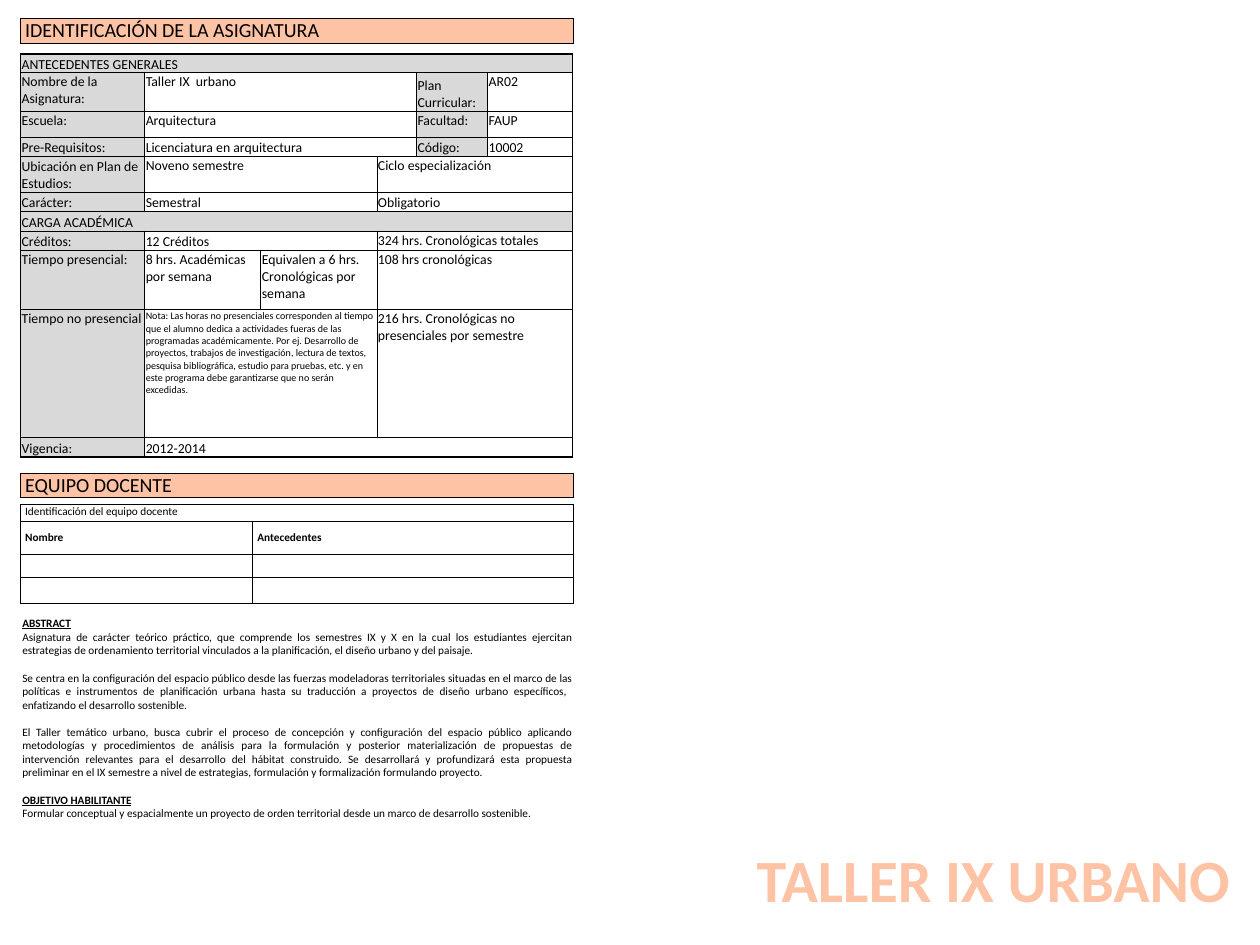
from dataclasses import dataclass

from lxml import etree
from pptx import Presentation
from pptx.dml.color import RGBColor
from pptx.enum.text import MSO_ANCHOR, PP_ALIGN
from pptx.oxml.ns import qn
from pptx.util import Inches, Pt

TOP, MIDDLE, BOTTOM = MSO_ANCHOR.TOP, MSO_ANCHOR.MIDDLE, MSO_ANCHOR.BOTTOM
LEFT, RIGHT, JUSTIFY = PP_ALIGN.LEFT, PP_ALIGN.RIGHT, PP_ALIGN.JUSTIFY

BLACK = RGBColor(0x00, 0x00, 0x00)
GRAY = RGBColor(0xD9, 0xD9, 0xD9)
PEACH = RGBColor(0xFD, 0xC3, 0xA4)
FONT = "Calibri"

TABLE_LEFT = 0.23
TABLE_WIDTH = 6.14
WIDE_INSETS = (0.05, 0)
TIGHT_INSETS = (0.01, 0.01)


@dataclass
class Cell:
    text: str = ""
    span: int = 1
    anchor: MSO_ANCHOR = TOP
    fill: RGBColor = None
    size: float = 11
    bold: bool = False


def label(text, anchor=TOP, span=1):
    return Cell(text, span, anchor, GRAY)


def subject_rows():
    return [
        [label("ANTECEDENTES GENERALES", BOTTOM, span=6)],
        [label("Nombre de la Asignatura:"), Cell("Taller IX  urbano", 3),
         label("Plan Curricular:", BOTTOM), Cell("AR02")],
        [label("Escuela:"), Cell("Arquitectura", 3), label("Facultad:"), Cell("FAUP")],
        [label("Pre-Requisitos:", BOTTOM), Cell("Licenciatura en arquitectura", 3, BOTTOM),
         label("Código:", BOTTOM), Cell("10002", anchor=BOTTOM)],
        [label("Ubicación en Plan de Estudios:", BOTTOM), Cell("Noveno semestre", 2),
         Cell("Ciclo especialización", 3)],
        [label("Carácter:", BOTTOM), Cell("Semestral", 2, BOTTOM), Cell("Obligatorio", 3, BOTTOM)],
        [label("CARGA ACADÉMICA", BOTTOM, span=6)],
        [label("Créditos:", BOTTOM), Cell("12 Créditos", 2, BOTTOM),
         Cell("324 hrs. Cronológicas totales", 3)],
        [label("Tiempo presencial:"), Cell("8 hrs. Académicas por semana"),
         Cell("Equivalen a 6 hrs. Cronológicas por semana"), Cell("108 hrs cronológicas", 3)],
        [label("Tiempo no presencial"),
         Cell("Nota: Las horas no presenciales corresponden al tiempo que el alumno dedica a "
              "actividades fueras de las programadas académicamente. Por ej. Desarrollo de "
              "proyectos, trabajos de investigación, lectura de textos, pesquisa bibliográfica, "
              "estudio para pruebas, etc. y en este programa debe garantizarse que no serán "
              "excedidas.", 2, size=8),
         Cell("216 hrs. Cronológicas no presenciales por semestre", 3)],
        [label("Vigencia:", BOTTOM), Cell("2012-2014", 5, BOTTOM)],
    ]


def team_rows():
    return [
        [Cell("Identificación del equipo docente", 2, size=9)],
        [Cell(text, anchor=MIDDLE, size=9, bold=True) for text in ("Nombre", "Antecedentes")],
        [Cell(size=9), Cell(size=9)],
        [Cell(size=9), Cell(size=9)],
    ]


# Each section: heading (or None) and body text
DESCRIPTION = [
    ("ABSTRACT",
     "Asignatura de carácter teórico práctico, que comprende los semestres IX y X en la cual los "
     "estudiantes ejercitan estrategias de ordenamiento territorial vinculados a la "
     "planificación, el diseño urbano y del paisaje."),
    (None,
     "Se centra en la configuración del espacio público desde las fuerzas modeladoras "
     "territoriales situadas en el marco de las políticas e instrumentos de planificación urbana "
     "hasta su traducción a proyectos de diseño urbano específicos,  enfatizando el desarrollo "
     "sostenible."),
    (None,
     "El Taller temático urbano, busca cubrir el proceso de concepción y configuración del "
     "espacio público aplicando metodologías y procedimientos de análisis para la formulación y "
     "posterior materialización de propuestas de intervención relevantes para el desarrollo del "
     "hábitat construido. Se desarrollará y profundizará esta propuesta preliminar en el IX "
     "semestre a nivel de estrategias, formulación y formalización formulando proyecto."),
    ("OBJETIVO HABILITANTE",
     "Formular conceptual y espacialmente un proyecto de orden territorial desde un marco de "
     "desarrollo sostenible."),
]


def write_text(paragraph, text, size=11, color=BLACK, bold=False, underline=False,
               align=LEFT, space_before=0):
    paragraph.alignment = align
    paragraph.space_before = Pt(space_before)
    if not text:
        # An empty paragraph takes its line height from its end mark.
        paragraph._p.get_or_add_endParaRPr().set("sz", str(int(size * 100)))
        return
    run = paragraph.add_run()
    run.text = text
    run.font.name = FONT
    run.font.size = Pt(size)
    run.font.color.rgb = color
    run.font.bold = bold
    run.font.underline = underline


def add_borders(cell):
    properties = cell._tc.get_or_add_tcPr()
    for side in ("a:lnL", "a:lnR", "a:lnT", "a:lnB"):
        line = etree.SubElement(properties, qn(side), w=str(Pt(1)))
        fill = etree.SubElement(line, qn("a:solidFill"))
        etree.SubElement(fill, qn("a:srgbClr"), val=str(BLACK))


def format_cell(cell, content, insets):
    side, top = insets
    cell.margin_left = cell.margin_right = Inches(side)
    cell.margin_top, cell.margin_bottom = Inches(top), 0
    cell.vertical_anchor = content.anchor
    add_borders(cell)
    if content.fill is None:
        cell.fill.background()
    else:
        cell.fill.solid()
        cell.fill.fore_color.rgb = content.fill
    write_text(cell.text_frame.paragraphs[0], content.text, size=content.size, bold=content.bold)


def add_table(slide, top, widths, heights, rows, insets):
    table = slide.shapes.add_table(
        len(heights), len(widths), Inches(TABLE_LEFT), Inches(top),
        Inches(sum(widths)), Inches(sum(heights))).table
    table.first_row = table.horz_banding = False
    for column, width in zip(table.columns, widths):
        column.width = Inches(width)
    for row, height in zip(table.rows, heights):
        row.height = Inches(height)
    for row_index, contents in enumerate(rows):
        column_index = 0
        for content in contents:
            last = column_index + content.span - 1
            format_cell(table.cell(row_index, column_index), content, insets)
            for covered in range(column_index + 1, last + 1):
                format_cell(table.cell(row_index, covered),
                            Cell(fill=content.fill, size=content.size), insets)
            if content.span > 1:
                table.cell(row_index, column_index).merge(table.cell(row_index, last))
            column_index = last + 1


def add_heading_bar(slide, top, text):
    add_table(slide, top, [TABLE_WIDTH], [0.27], [[Cell(text, fill=PEACH, size=16)]], WIDE_INSETS)


def add_text_box(slide, left, top, width, height, lines):
    """Add a wrapped box; lines are pairs of text and format arguments."""
    frame = slide.shapes.add_textbox(
        Inches(left), Inches(top), Inches(width), Inches(height)).text_frame
    frame.word_wrap = True
    for index, (text, text_format) in enumerate(lines):
        paragraph = frame.add_paragraph() if index else frame.paragraphs[0]
        write_text(paragraph, text, **text_format)


def description_lines():
    lines = []
    for heading, body in DESCRIPTION:
        gap = 11 if lines else 0
        if heading:
            lines.append((heading, dict(size=9, bold=True, underline=True, align=JUSTIFY,
                                        space_before=gap)))
            gap = 0
        lines.append((body, dict(size=9, align=JUSTIFY, space_before=gap)))
    return lines


def main():
    presentation = Presentation()
    presentation.slide_width, presentation.slide_height = Inches(14), Inches(10.5)
    slide = presentation.slides.add_slide(presentation.slide_layouts[6])

    add_heading_bar(slide, 0.21, "IDENTIFICACIÓN DE LA ASIGNATURA")
    add_table(slide, 0.6, [1.38, 1.29, 1.29, 0.44, 0.79, 0.94],
              [0.21, 0.43, 0.29, 0.21, 0.4, 0.21, 0.22, 0.21, 0.66, 1.42, 0.22],
              subject_rows(), TIGHT_INSETS)
    add_heading_bar(slide, 5.26, "EQUIPO DOCENTE")
    add_table(slide, 5.61, [2.58, 3.56], [0.19, 0.36, 0.26, 0.29], team_rows(), WIDE_INSETS)
    add_text_box(slide, 0.15, 6.8, 6.3, 2.37, description_lines())
    add_text_box(slide, 6.53, 9.31, 7.24, 0.91,
                 [("TALLER IX URBANO", dict(size=48, color=PEACH, bold=True, align=RIGHT))])
    presentation.save("out.pptx")


if __name__ == "__main__":
    main()
